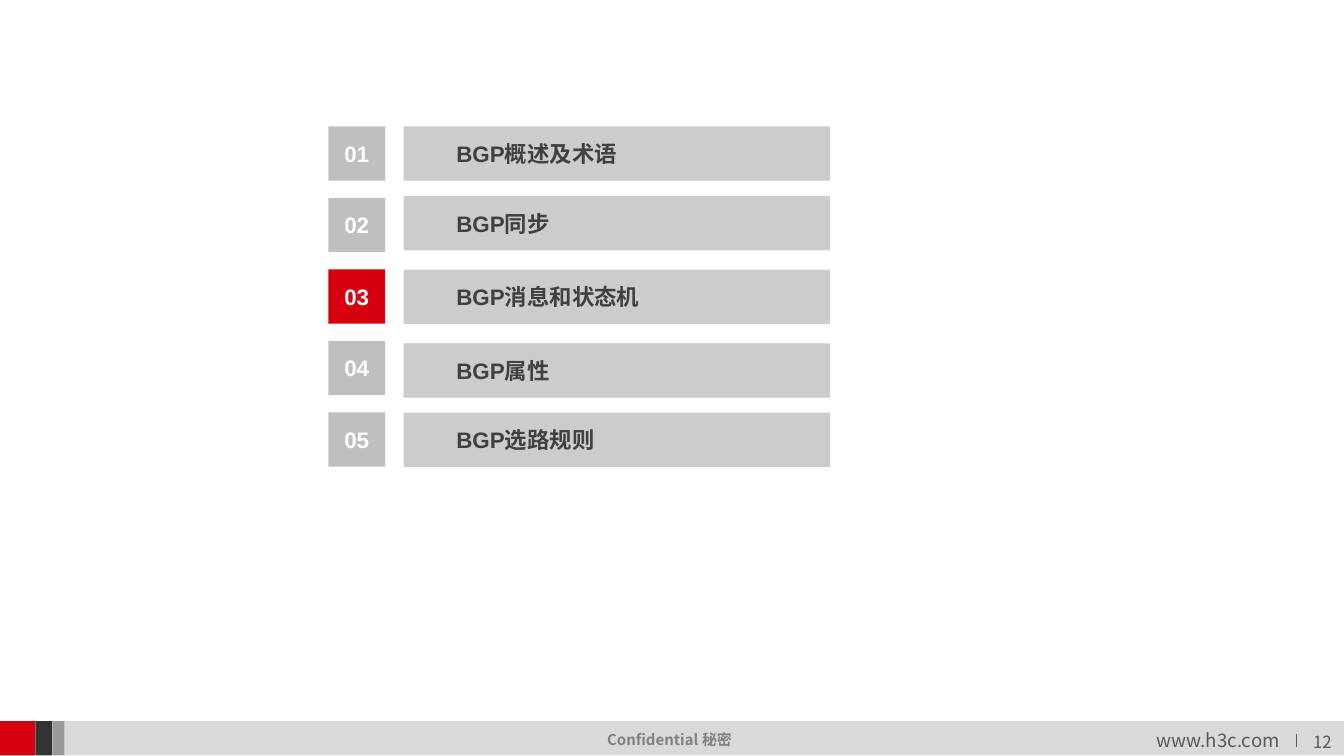
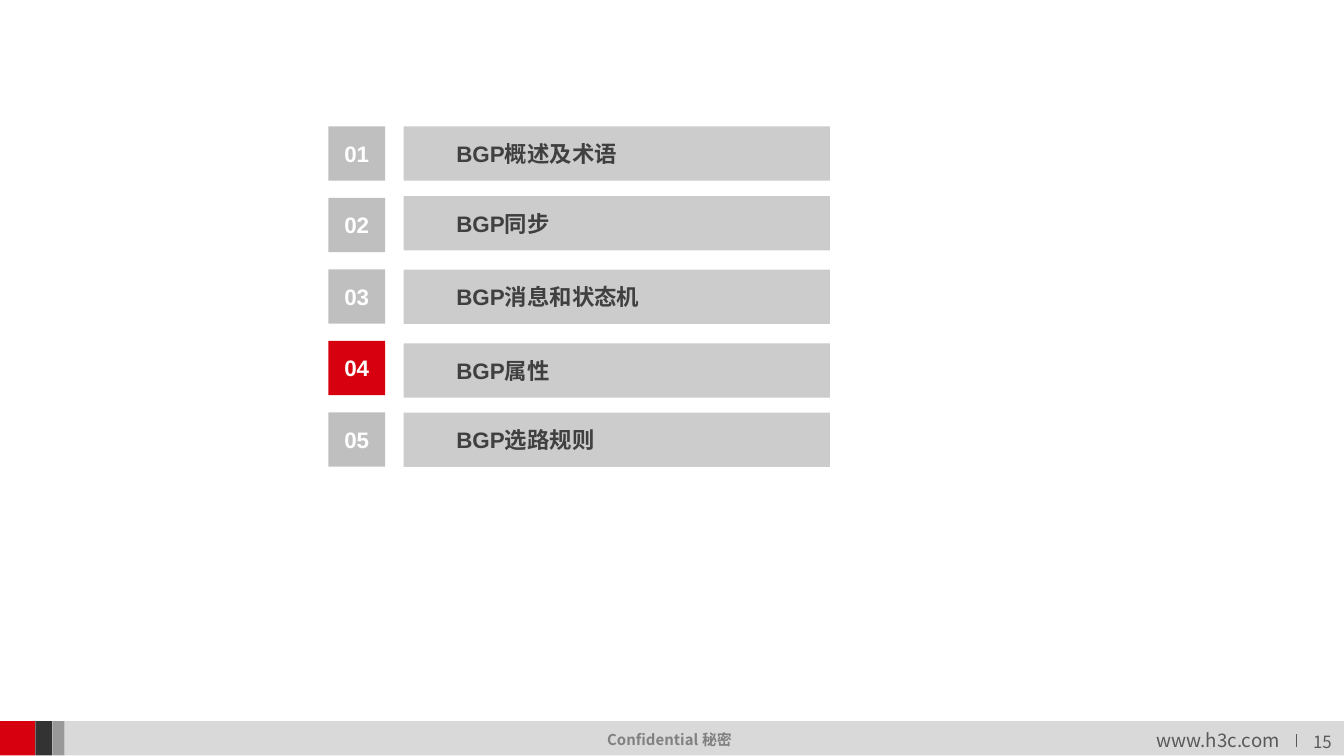
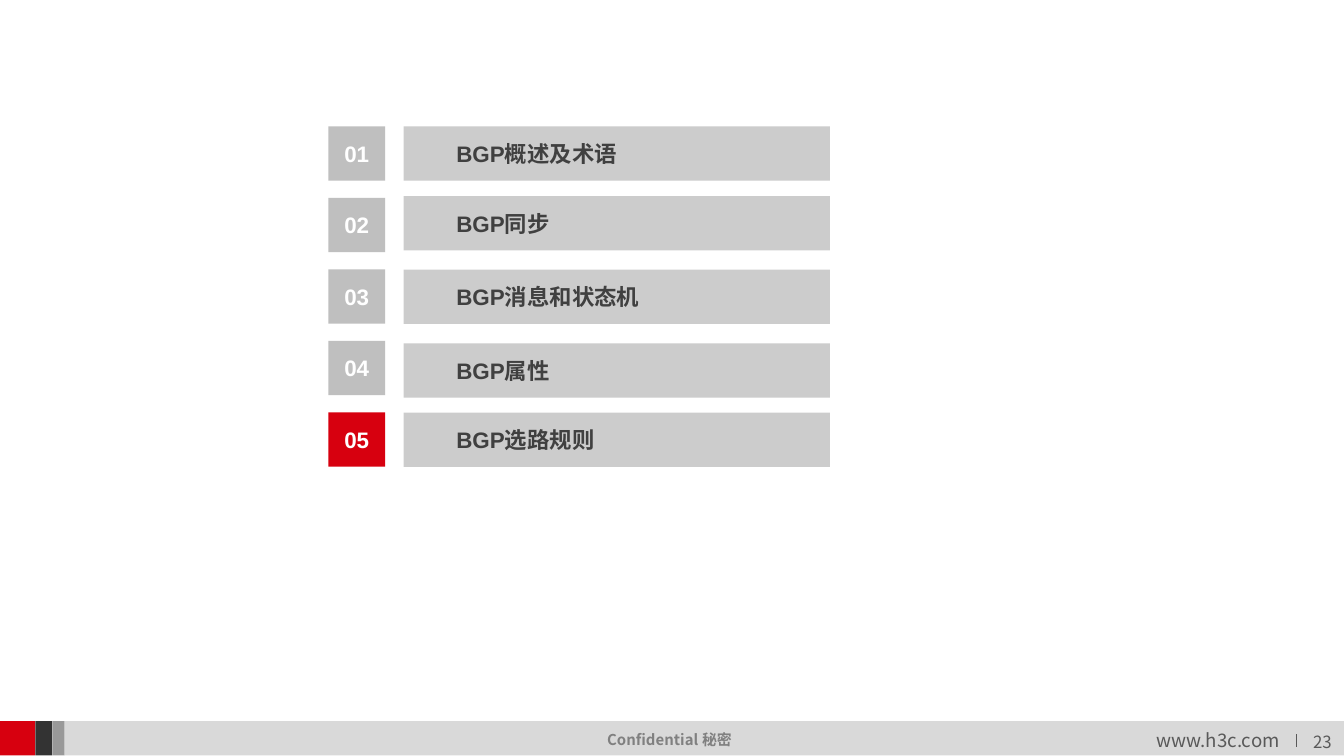
from lxml.etree import SubElement
from pptx import Presentation
from pptx.dml.color import RGBColor
from pptx.enum.shapes import MSO_CONNECTOR, MSO_SHAPE
from pptx.enum.text import MSO_ANCHOR, PP_ALIGN
from pptx.oxml.ns import qn
from pptx.util import Pt

WIDTH, HEIGHT = 720, 405
CJK = "Noto Sans CJK SC"
RED, WHITE = "D7000F", "FFFFFF"
NUMBER_GREY, BAR_GREY, BAR_TEXT = "BFBFBF", "CCCCCC", "404040"
FOOTER_GREY, FOOTER_TEXT, CONFIDENTIAL_TEXT = "D9D9D9", "595959", "808080"

# Chapter title and the top of its bar within the agenda
CHAPTERS = [
    ("BGP概述及术语", 0),
    ("BGP同步", 37.4),
    ("BGP消息和状态机", 76.7),
    ("BGP属性", 116.2),
    ("BGP选路规则", 153.4),
]
# Active chapter and page number of each slide
PAGES = [(3, 12), (4, 15), (5, 23)]


def rgb(color):
    return RGBColor.from_string(color)


def set_text(sp, text, size=12, font="Arial", color=BAR_TEXT, bold=False,
             align=PP_ALIGN.LEFT, wrap=True, insets=(7.2, 3.6, 7.2, 3.6)):
    tf = sp.text_frame
    tf.word_wrap = wrap
    tf.vertical_anchor = MSO_ANCHOR.MIDDLE
    tf.margin_left, tf.margin_top, tf.margin_right, tf.margin_bottom = map(Pt, insets)
    p = tf.paragraphs[0]
    p.alignment = align
    r = p.add_run()
    r.text = text
    r.font.size, r.font.bold, r.font.name = Pt(size), bold, font
    r.font.color.rgb = rgb(color)
    SubElement(r.font._element, qn("a:ea"), typeface=CJK)


def add_rect(shapes, x, y, w, h, fill):
    sp = shapes.add_shape(MSO_SHAPE.RECTANGLE, Pt(x), Pt(y), Pt(w), Pt(h))
    sp.shadow.inherit = False
    sp.fill.solid()
    sp.fill.fore_color.rgb = rgb(fill)
    sp.line.fill.background()
    return sp


def add_label(shapes, x, y, w, h, text, **fmt):
    sp = shapes.add_textbox(Pt(x), Pt(y), Pt(w), Pt(h))
    set_text(sp, text, font=CJK, **fmt)


def add_footer(slide, page, y=386.3, h=18.4):
    # Colour band
    band = slide.shapes.add_group_shape().shapes
    edges = [0, 18.9, 28, 34.6, WIDTH]
    fills = [RED, "333333", "999999", FOOTER_GREY]
    for left, right, fill in zip(edges, edges[1:], fills):
        add_rect(band, left, y, right - left, h, fill)

    # Address, confidentiality mark and page number
    add_label(slide.shapes, 612.7, y + 0.3, 81.4, 19.4, "www.h3c.com",
              size=10, color=FOOTER_TEXT, wrap=False)
    add_label(slide.shapes, 318.2, y + 1.5, 83.5, 17, "Confidential 秘密",
              size=8, color=CONFIDENTIAL_TEXT, bold=True, wrap=False)
    add_label(slide.shapes, 689, y + 1.1, 31.5, 17.3, str(page), size=9,
              color=FOOTER_TEXT, align=PP_ALIGN.RIGHT, insets=(7.2, 5.8, 7.2, 3.6))

    # Divider before the page number
    divider = slide.shapes.add_connector(
        MSO_CONNECTOR.STRAIGHT, Pt(694.6), Pt(y + 7), Pt(694.6), Pt(y + 14))
    divider.line.color.rgb = rgb(FOOTER_TEXT)
    divider.line.width = Pt(0.75)
    SubElement(divider._element.spPr, qn("a:effectLst"))


def add_agenda(slide, active, x=175.9, y=67.7, row_h=29.1, pitch=38.3):
    for i, (title, bar_top) in enumerate(CHAPTERS):
        number = add_rect(slide.shapes, x, y + i * pitch, 30.5, row_h,
                          RED if i + 1 == active else NUMBER_GREY)
        set_text(number, f"{i + 1:02}", color=WHITE, bold=True, align=PP_ALIGN.CENTER)
        bar = add_rect(slide.shapes, x + 40.4, y + bar_top, 228.3, row_h, BAR_GREY)
        set_text(bar, title, bold=True, insets=(28.2, 3.6, 7.2, 3.6))


def main():
    prs = Presentation()
    prs.slide_width, prs.slide_height = Pt(WIDTH), Pt(HEIGHT)
    for active, page in PAGES:
        slide = prs.slides.add_slide(prs.slide_layouts[6])
        add_footer(slide, page)
        add_agenda(slide, active)
    prs.save("out.pptx")


if __name__ == "__main__":
    main()
